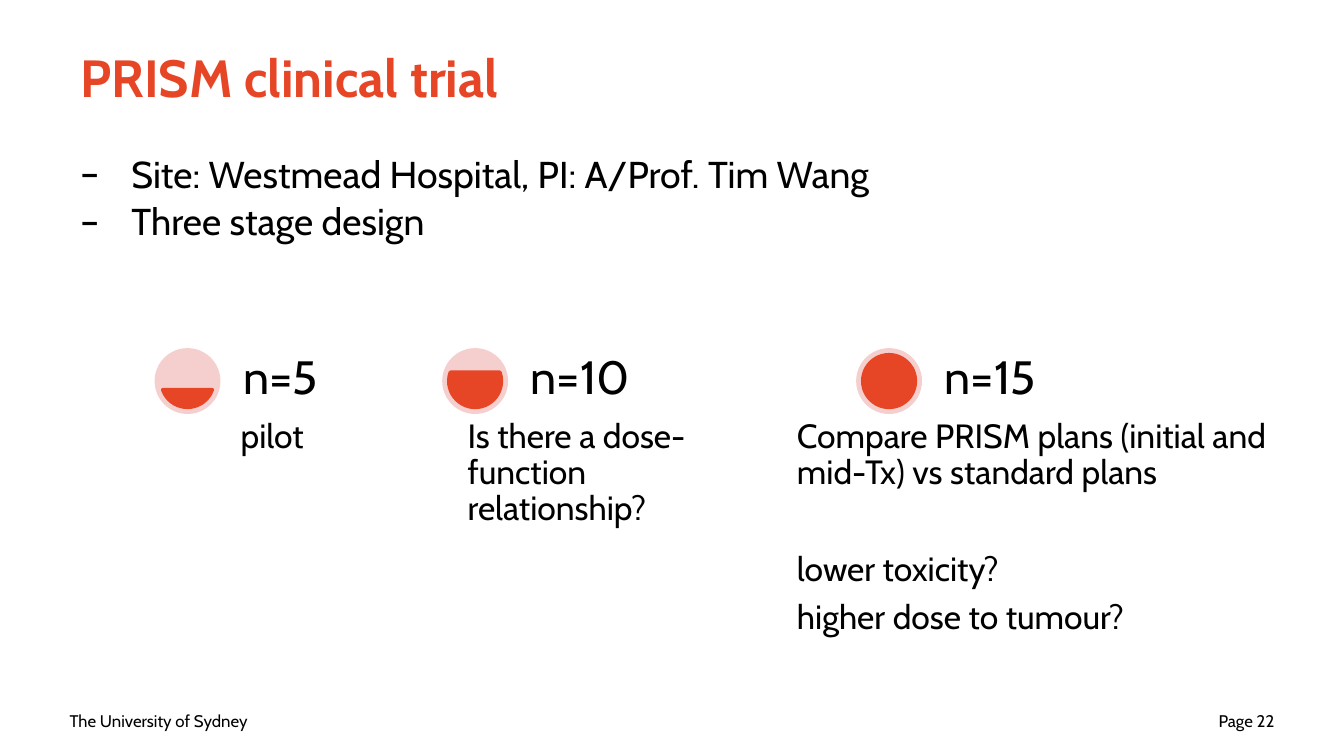
from lxml import etree
from pptx import Presentation
from pptx import util as u
from pptx.dml.color import RGBColor
from pptx.enum import shapes, text
from pptx.oxml.ns import qn

RED, PINK, BLACK = "E64626", "F5CFCD", "000000"
FONT = "Cabin"


def rgb(value):
    return RGBColor.from_string(value)


class Deck:
    def __init__(self, width):
        self.prs = Presentation()
        self.prs.slide_width = u.Inches(width)
        self.prs.slide_height = u.Inches(width * 9 / 16)
        self.s = self.prs.slides.add_slide(self.prs.slide_layouts[6])

    def text(self, box, lines, size, color=BLACK, bold=False, inset=None,
             anchor=text.MSO_ANCHOR.TOP, bullet=None, **fmt):
        """Each line is a string or a (string, paragraph format) pair."""
        sp = self.s.shapes.add_textbox(*map(u.Inches, box))
        tf = sp.text_frame
        tf.word_wrap = True
        tf.vertical_anchor = anchor
        if inset is not None:
            for side in ("left", "top", "right", "bottom"):
                setattr(tf, f"margin_{side}", u.Inches(inset))
        for i, line in enumerate(lines):
            words, extra = (line, {}) if isinstance(line, str) else line
            p = tf.paragraphs[0] if i == 0 else tf.add_paragraph()
            for name, value in {**fmt, **extra}.items():
                setattr(p, name, value)
            r = p.add_run()
            r.text = words
            font = {"name": FONT, "size": u.Pt(size), "bold": bold}
            for name, value in font.items():
                setattr(r.font, name, value)
            r.font.color.rgb = rgb(color)
            if bullet:
                self.bullet(p, bullet, 0.38)

    def bullet(self, p, char, indent):
        pPr = p._p.get_or_add_pPr()
        pPr.set("marL", str(u.Inches(indent)))
        pPr.set("indent", str(-u.Inches(indent)))
        etree.SubElement(pPr, qn("a:buFont")).set("typeface", FONT)
        etree.SubElement(pPr, qn("a:buChar")).set("char", char)

    def shape(self, kind, box, fill, line=None, adjust=()):
        sp = self.s.shapes.add_shape(kind, *map(u.Inches, box))
        sp.shadow.inherit = False
        sp.fill.solid()
        sp.fill.fore_color.rgb = rgb(fill)
        if line:
            sp.line.color.rgb = rgb(line)
            sp.line.width = u.Pt(2)
        else:
            sp.line.fill.background()
        for i, value in enumerate(adjust):
            sp.adjustments[i] = value

    def stage(self, x, count, chord, note_x, note_width, notes):
        """A filling circle with its patient count and a note below."""
        top, size, rim = 2.59, 0.49, 0.05
        inner = size - 2 * rim
        self.shape(shapes.MSO_SHAPE.OVAL, (x, top, size, size), PINK)
        self.shape(shapes.MSO_SHAPE.CHORD, (x + rim, top + rim, inner, inner),
                   RED, RED, chord)
        self.text((note_x, 3.07, note_width, 2.06), notes, 18, inset=0.05,
                  line_spacing=0.9, space_after=u.Pt(6.3))
        self.text((x + 0.59, top, 1.45, size), [count], 25, inset=0.07,
                  anchor=text.MSO_ANCHOR.BOTTOM, line_spacing=0.9)


def main():
    deck = Deck(10)
    middle = text.MSO_ANCHOR.MIDDLE

    # Footer
    deck.text((0.42, 5.21, 2.33, 0.3), ["The University of Sydney"], 9,
              anchor=middle)
    deck.text((7.25, 5.21, 2.33, 0.3), ["Page 22"], 9, anchor=middle,
              alignment=text.PP_ALIGN.RIGHT)

    # Title and key points
    deck.text((0.5, 0.1, 9, 0.94), ["PRISM clinical trial"], 28, RED, True,
              anchor=middle)
    deck.text((0.5, 1.11, 9, 3.91),
              ["Site: Westmead Hospital, PI: A/Prof. Tim Wang",
               "Three stage design"],
              20, bullet="–", line_spacing=0.9, space_before=u.Pt(4))

    # Three stages: circle x, count, chord angles, note x, note width, notes
    stages = [
        (1.15, "n=5", (11.683, 96.317), 1.74, 1.45, ["pilot"]),
        (3.29, "n=10", (204.317, 119.683), 3.43, 2.35,
         ["Is there a dose-function relationship?"]),
        (6.37, "n=15", (162, 162), 5.88, 3.62,
         ["Compare PRISM plans (initial and mid-Tx) vs standard plans",
          ("lower toxicity?", {"space_before": u.Pt(26)}),
          "higher dose to tumour?"]),
    ]
    for stage in stages:
        deck.stage(*stage)

    deck.prs.save("out.pptx")


if __name__ == "__main__":
    main()
